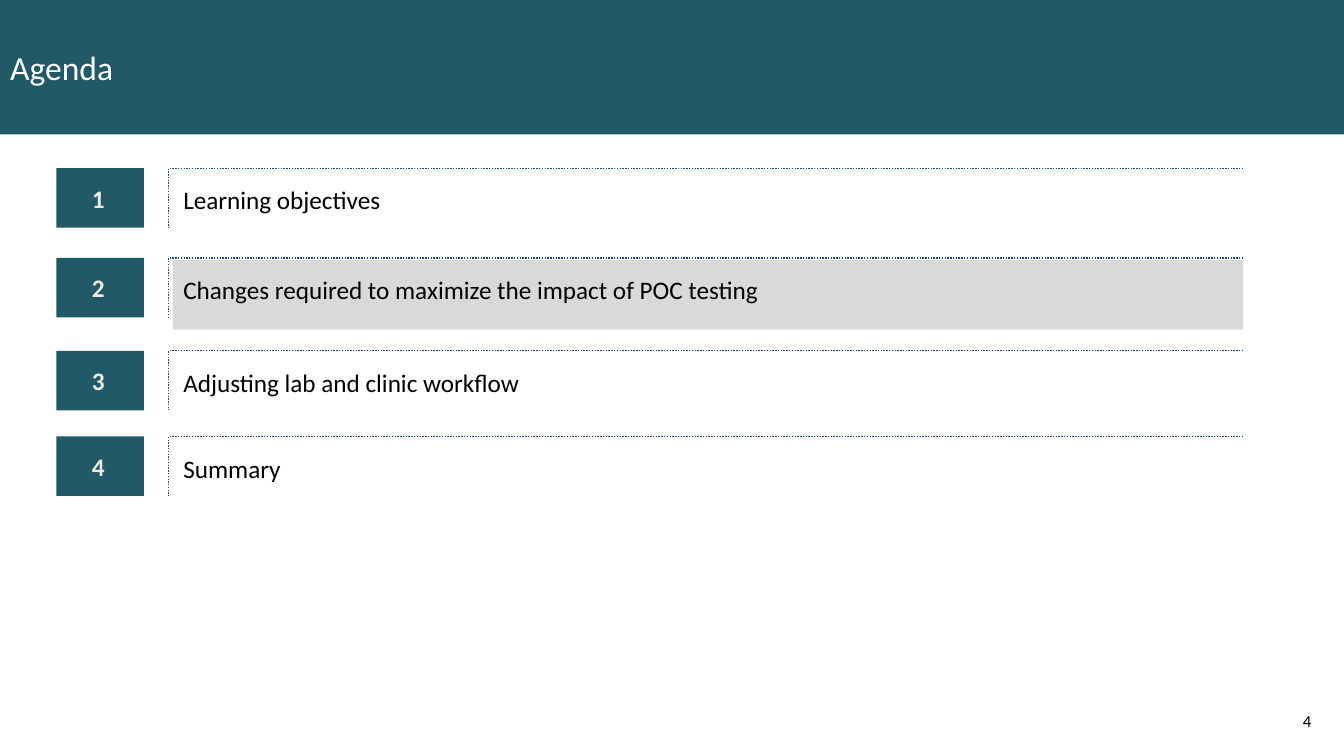
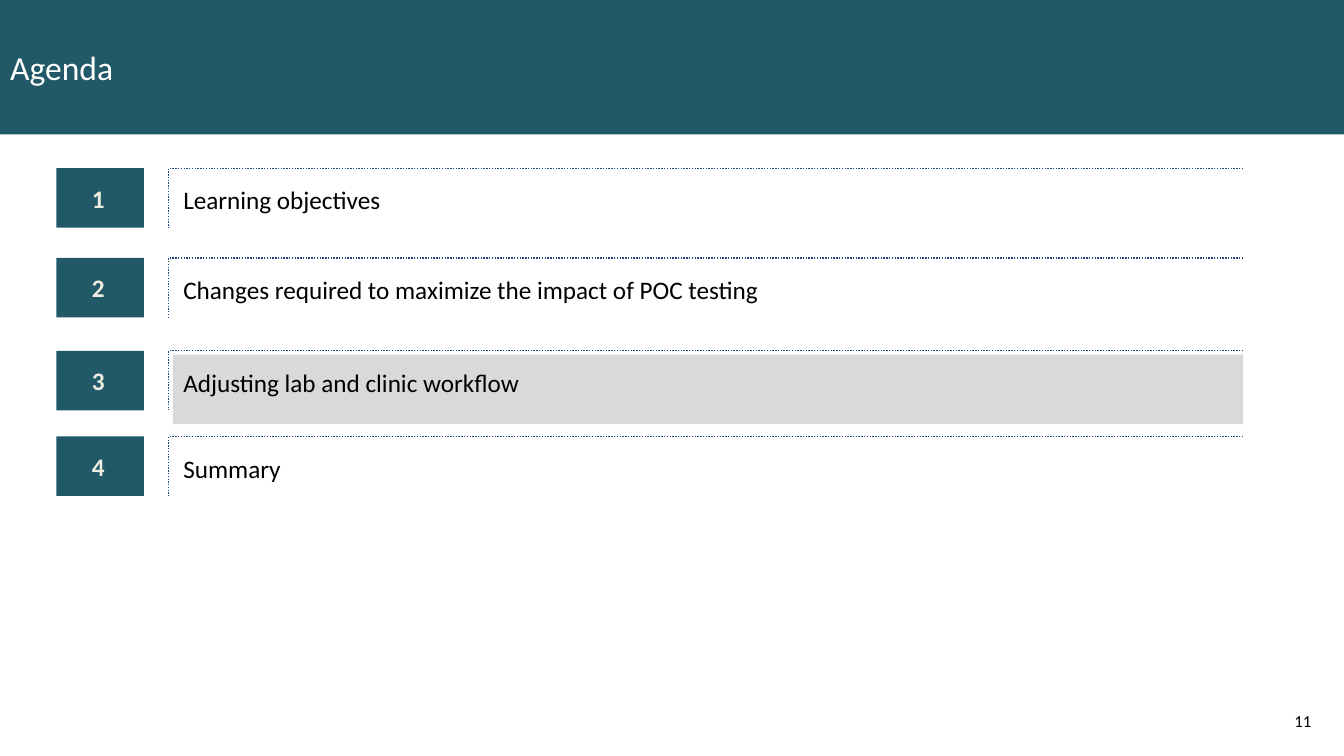
"""Builds two agenda slides, each with one item marked."""
from dataclasses import dataclass

from pptx import Presentation
from pptx.dml.color import RGBColor
from pptx.enum import dml, shapes, text
from pptx.util import Cm, Pt

TITLE = "Agenda"
ITEMS = [
    ("Learning objectives", 4.24),
    ("Changes required to maximize the impact of POC testing", 6.5),
    ("Adjusting lab and clinic workflow", 8.84),
    ("Summary", 11),
]
SLIDES = [
    {"page": 4, "mark": 6.55},
    {"page": 11, "mark": 8.94},
]


@dataclass(frozen=True)
class Theme:
    """Holds the colours, font and type sizes."""
    font: str = "Calibri"
    teal: str = "215968"
    gray: str = "D9D9D9"
    navy: str = "1F497D"
    cream: str = "EEECE1"
    white: str = "FFFFFF"
    black: str = "000000"
    head: int = 24
    body: int = 18
    small: int = 12


T = Theme()
WIDE, HIGH = 33.87, 19.05
LEFT, RIGHT = 4.25, 31.33
ROW = 1.5


def paint(shape, color):
    """Fills a shape with one colour."""
    shape.fill.solid()
    shape.fill.fore_color.rgb = RGBColor.from_string(color)


def write(shape, words, size, color, align=text.PP_ALIGN.LEFT, bold=False,
          anchor=text.MSO_ANCHOR.MIDDLE, pads=None):
    """Sets and formats the one paragraph of a shape."""
    frame = shape.text_frame
    frame.text = words
    frame.word_wrap = True
    frame.auto_size = text.MSO_AUTO_SIZE.NONE
    frame.vertical_anchor = anchor
    if pads:
        (frame.margin_left, frame.margin_top,
         frame.margin_right, frame.margin_bottom) = map(Cm, pads)
    para = frame.paragraphs[0]
    para.alignment = align
    font = para.runs[0].font
    font.name, font.size, font.bold = T.font, Pt(size), bold
    font.color.rgb = RGBColor.from_string(color)
    return para


def add_box(slide, x, y, w, h, color):
    """Adds a plain filled box."""
    box = slide.shapes.add_shape(shapes.MSO_SHAPE.RECTANGLE,
                                 Cm(x), Cm(y), Cm(w), Cm(h))
    box.shadow.inherit = False
    box.line.fill.background()
    paint(box, color)
    return box


def add_label(slide, x, y, w, h, *args, **style):
    """Adds a text box and returns its paragraph."""
    label = slide.shapes.add_textbox(Cm(x), Cm(y), Cm(w), Cm(h))
    return write(label, *args, **style)


def add_title(slide):
    """Turns the title placeholder into the top band."""
    title = slide.shapes.title
    title.left, title.top = Cm(0), Cm(0)
    title.width, title.height = Cm(WIDE), Cm(3.39)
    paint(title, T.teal)
    write(title, TITLE, T.head, T.white)


def add_rule(slide, y):
    """Draws the dotted corner line of a row."""
    pen = slide.shapes.build_freeform(Cm(RIGHT), Cm(y))
    pen.add_line_segments([(Cm(LEFT), Cm(y)), (Cm(LEFT), Cm(y + ROW))],
                          close=False)
    rule = pen.convert_to_shape()
    rule.shadow.inherit = False
    rule.fill.background()
    rule.line.color.rgb = RGBColor.from_string(T.navy)
    rule.line.width = Pt(1)
    rule.line.dash_style = dml.MSO_LINE.ROUND_DOT


def add_row(slide, num, words, y):
    """Adds a numbered agenda row."""
    box = add_box(slide, 1.42, y, 2.21, ROW, T.teal)
    write(box, str(num), T.body, T.cream, text.PP_ALIGN.CENTER, True,
          pads=(0.15, 0.13, 0.25, 0.13))
    para = add_label(slide, 4.62, y + 0.47, RIGHT - 4.62, 0.74, words,
                     T.body, T.black, anchor=text.MSO_ANCHOR.TOP,
                     pads=(0, 0, 0, 0))
    para.line_spacing = 0.95
    add_rule(slide, y)


def main():
    """Builds and saves the deck."""
    deck = Presentation()
    deck.slide_width, deck.slide_height = Cm(WIDE), Cm(HIGH)
    for data in SLIDES:
        slide = deck.slides.add_slide(deck.slide_layouts[5])
        add_title(slide)
        add_box(slide, 4.36, data["mark"], RIGHT - 4.36, 1.75, T.gray)
        for num, (words, y) in enumerate(ITEMS, 1):
            add_row(slide, num, words, y)
        add_label(slide, 30.76, 17.65, 2.54, 1.02, str(data["page"]),
                  T.small, T.black, text.PP_ALIGN.RIGHT)
    deck.save("out.pptx")


if __name__ == "__main__":
    main()
